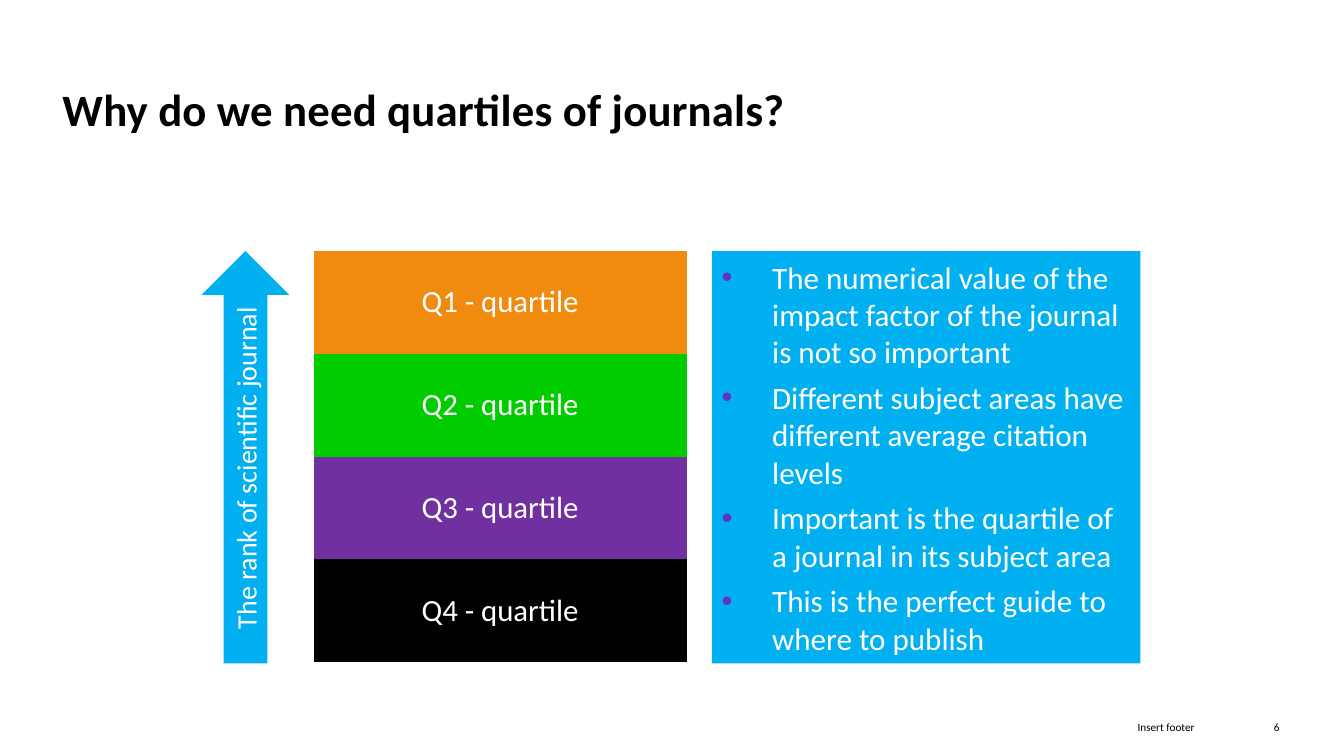
from dataclasses import dataclass

from lxml import etree
from pptx import Presentation, util as u
from pptx.dml.color import RGBColor
from pptx.enum import shapes, text
from pptx.oxml.ns import qn

EMU_PER_PX = 9144  # 100 px to the inch
FONT = "Calibri"
BLACK, WHITE, BLUE, BULLET_PURPLE = "000000", "FFFFFF", "00B0F0", "5E33BF"
NO_TABLE_STYLE = "{2D5ABB26-0587-4C30-8999-92F81FD0307C}"
DIAGRAM_TOP, ROW_HEIGHT = 249, 102
DIAGRAM_HEIGHT = 409


@dataclass(frozen=True)
class Label:
    wording: str
    left: int
    top: int
    width: int
    height: int
    size: float
    align: text.PP_ALIGN = text.PP_ALIGN.RIGHT
    bold: bool = False
    line_spacing: float = 1.0
    tracking: int = 0  # hundredths of a point


@dataclass(frozen=True)
class Quartile:
    wording: str
    fill: str


LABELS = [
    Label("6", 1237, 715, 32, 18, 8),
    Label("Insert footer", 735, 715, 450, 20, 8),
    Label("Why do we need quartiles of journals?", 62, 89, 1116, 43, 32,
          text.PP_ALIGN.LEFT, True, 0.85, 10),
]
QUARTILES = [
    Quartile("Q1 - quartile", "F18B0F"),
    Quartile("Q2 - quartile", "00CC00"),
    Quartile("Q3 - quartile", "7030A0"),
    Quartile("Q4 - quartile", BLACK),
]
REASONS = [
    "The numerical value of the impact factor of the journal is not so important",
    "Different subject areas have different average citation levels",
    "Important is the quartile of a journal in its subject area",
    "This is the perfect guide to where to publish",
]


def px(length: int) -> u.Emu:
    return u.Emu(length * EMU_PER_PX)


def box(left: int, top: int, width: int, height: int) -> tuple:
    return px(left), px(top), px(width), px(height)


def color(hex_code: str) -> RGBColor:
    return RGBColor.from_string(hex_code)


def add_run(paragraph, wording: str, size: float, ink: str, bold: bool = False):
    run = paragraph.add_run()
    run.text = wording
    run.font.name = FONT
    run.font.size = u.Pt(size)
    run.font.bold = bold
    run.font.color.rgb = color(ink)
    return run


def add_label(slide, label: Label) -> None:
    frame = slide.shapes.add_textbox(
        *box(label.left, label.top, label.width, label.height)).text_frame
    frame.word_wrap = True
    frame.margin_left = frame.margin_right = frame.margin_top = frame.margin_bottom = 0
    paragraph = frame.paragraphs[0]
    paragraph.alignment = label.align
    paragraph.line_spacing = label.line_spacing
    run = add_run(paragraph, label.wording, label.size, BLACK, label.bold)
    if label.tracking:
        run._r.get_or_add_rPr().set("spc", str(label.tracking))


def add_blue_shape(slide, kind: shapes.MSO_SHAPE, left: int, width: int):
    """Add a borderless shape as tall as the diagram and return its text frame."""
    shape = slide.shapes.add_shape(kind, *box(left, DIAGRAM_TOP, width, DIAGRAM_HEIGHT))
    shape.shadow.inherit = False
    shape.fill.solid()
    shape.fill.fore_color.rgb = color(BLUE)
    shape.line.fill.background()
    frame = shape.text_frame
    frame.word_wrap = True
    frame.vertical_anchor = text.MSO_ANCHOR.MIDDLE
    return frame


def add_bullet(paragraph, indent: int) -> None:
    properties = paragraph._p.get_or_add_pPr()
    properties.set("marL", str(px(indent)))
    properties.set("indent", str(px(-indent)))
    bullet_color = etree.SubElement(properties, qn("a:buClr"))
    etree.SubElement(bullet_color, qn("a:srgbClr"), val=BULLET_PURPLE)
    etree.SubElement(properties, qn("a:buFont"), typeface="Arial")
    etree.SubElement(properties, qn("a:buChar"), char="•")


def add_reasons(slide) -> None:
    frame = add_blue_shape(slide, shapes.MSO_SHAPE.RECTANGLE, 706, 425)
    for index, reason in enumerate(REASONS):
        paragraph = frame.add_paragraph() if index else frame.paragraphs[0]
        add_bullet(paragraph, 50)
        paragraph.alignment = text.PP_ALIGN.LEFT
        paragraph.space_after = u.Pt(6)
        add_run(paragraph, reason, 22.2, WHITE)


def add_quartiles(slide) -> None:
    table = slide.shapes.add_table(
        len(QUARTILES), 1, *box(311, DIAGRAM_TOP, 370, DIAGRAM_HEIGHT)).table
    table.first_row = table.horz_banding = False
    table._tbl.tblPr.find(qn("a:tableStyleId")).text = NO_TABLE_STYLE
    for index, quartile in enumerate(QUARTILES):
        table.rows[index].height = px(ROW_HEIGHT)
        cell = table.cell(index, 0)
        cell.fill.solid()
        cell.fill.fore_color.rgb = color(quartile.fill)
        cell.vertical_anchor = text.MSO_ANCHOR.MIDDLE
        paragraph = cell.text_frame.paragraphs[0]
        paragraph.alignment = text.PP_ALIGN.CENTER
        add_run(paragraph, quartile.wording, 22, WHITE)


def add_rank_arrow(slide) -> None:
    frame = add_blue_shape(slide, shapes.MSO_SHAPE.UP_ARROW, 200, 87)
    frame._txBody.bodyPr.set("vert", "vert270")
    paragraph = frame.paragraphs[0]
    paragraph.alignment = text.PP_ALIGN.CENTER
    add_run(paragraph, "The rank of scientific journal", 20, WHITE)


def main() -> None:
    presentation = Presentation()
    presentation.slide_width, presentation.slide_height = px(1333), px(750)
    slide = presentation.slides.add_slide(presentation.slide_layouts[6])
    for label in LABELS:
        add_label(slide, label)
    add_reasons(slide)
    add_quartiles(slide)
    add_rank_arrow(slide)
    presentation.save("out.pptx")


if __name__ == "__main__":
    main()
